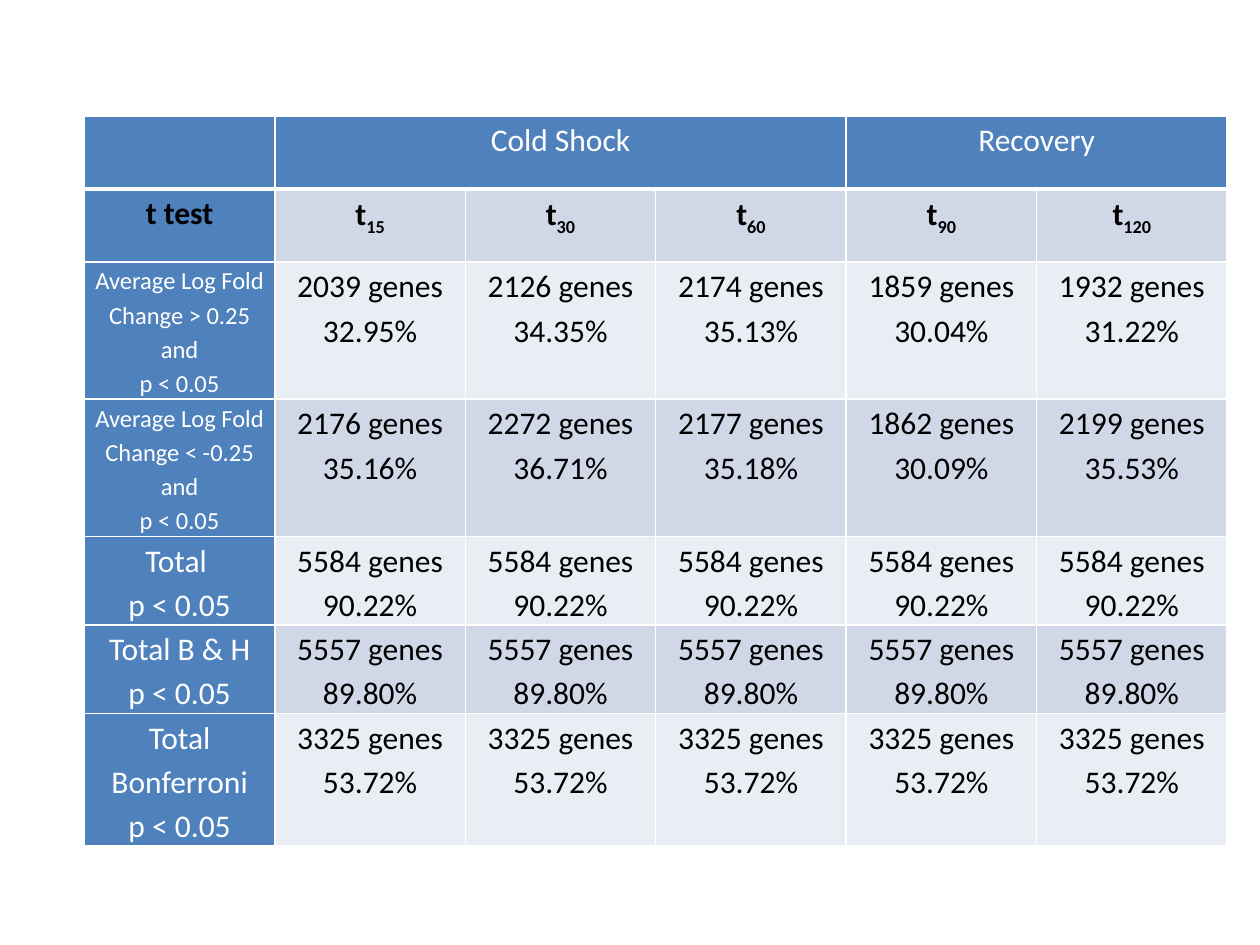
from lxml import etree
from pptx import Presentation
from pptx.dml.color import RGBColor
from pptx.enum.text import PP_ALIGN as Align
from pptx.oxml.ns import qn
from pptx.util import Inches, Pt

WHITE = RGBColor(0xFF, 0xFF, 0xFF)
BLACK = RGBColor(0x00, 0x00, 0x00)
BLUE = RGBColor(0x4F, 0x81, 0xBD)
DARK = RGBColor(0xD0, 0xD8, 0xE8)
LIGHT = RGBColor(0xE9, 0xED, 0xF4)

TIMES = ["15", "30", "60", "90", "120"]
TESTS = [
    ("Average Log Fold Change > 0.25 and", 14,
     [("2039", "32.95%"), ("2126", "34.35%"), ("2174", "35.13%"),
      ("1859", "30.04%"), ("1932", "31.22%")]),
    ("Average Log Fold Change < -0.25 and", 14,
     [("2176", "35.16%"), ("2272", "36.71%"), ("2177", "35.18%"),
      ("1862", "30.09%"), ("2199", "35.53%")]),
    ("Total ", 18, [("5584", "90.22%")] * 5),
    ("Total B & H", 18, [("5557", "89.80%")] * 5),
    ("Total Bonferroni", 18, [("3325", "53.72%")] * 5),
]


def style(cell, fill, base=1):
    """Give a cell white borders, the bottom one base points wide, and a fill."""
    props = cell._tc.get_or_add_tcPr()
    for side, width in (("L", 1), ("R", 1), ("T", 1), ("B", base)):
        line = etree.SubElement(props, qn(f"a:ln{side}"), w=str(Pt(width)))
        solid = etree.SubElement(line, qn("a:solidFill"))
        etree.SubElement(solid, qn("a:srgbClr"), val=str(WHITE))
    cell.fill.solid()
    cell.fill.fore_color.rgb = fill


def write(cell, lines, color, size=18, bold=False):
    """Write one paragraph per line; the second run of a line is a subscript."""
    cell.margin_left = cell.margin_right = Inches(0.07)
    cell.margin_top = cell.margin_bottom = 0
    frame = cell.text_frame
    for i, line in enumerate(lines):
        para = frame.add_paragraph() if i else frame.paragraphs[0]
        para.alignment = Align.CENTER
        para.line_spacing = 1.15
        for j, text in enumerate(line):
            run = para.add_run()
            run.text = text
            font = run.font
            font.name = "Calibri"
            font.size = Pt(size)
            font.bold = bold
            font.color.rgb = color
            if j:
                font._element.set("baseline", "-25000")


prs = Presentation()
prs.slide_width, prs.slide_height = Inches(10), Inches(7.5)
slide = prs.slides.add_slide(prs.slide_layouts[6])

rows, cols = len(TESTS) + 2, len(TIMES) + 1
table = slide.shapes.add_table(rows, cols, Inches(0.67), Inches(0.92),
                               Inches(9.07), Inches(0.58 * rows)).table
table.first_row = table.horz_banding = False

for r in range(rows):
    for c in range(cols):
        band = DARK if r % 2 else LIGHT
        head = r == 0 or c == 0
        style(table.cell(r, c), BLUE if head else band, 1 if r else 3)

for name, first, last in (("Cold Shock", 1, 3), ("Recovery", 4, 5)):
    table.cell(0, first).merge(table.cell(0, last))
    write(table.cell(0, first), [[name]], WHITE)

write(table.cell(1, 0), [["t test"]], BLACK, bold=True)
for c, time in enumerate(TIMES, 1):
    write(table.cell(1, c), [["t", time]], BLACK, bold=True)

for r, (label, size, values) in enumerate(TESTS, 2):
    write(table.cell(r, 0), [[label], ["p < 0.05"]], WHITE, size)
    for c, (count, share) in enumerate(values, 1):
        write(table.cell(r, c), [[f"{count} genes"], [share]], BLACK)

prs.save("out.pptx")
